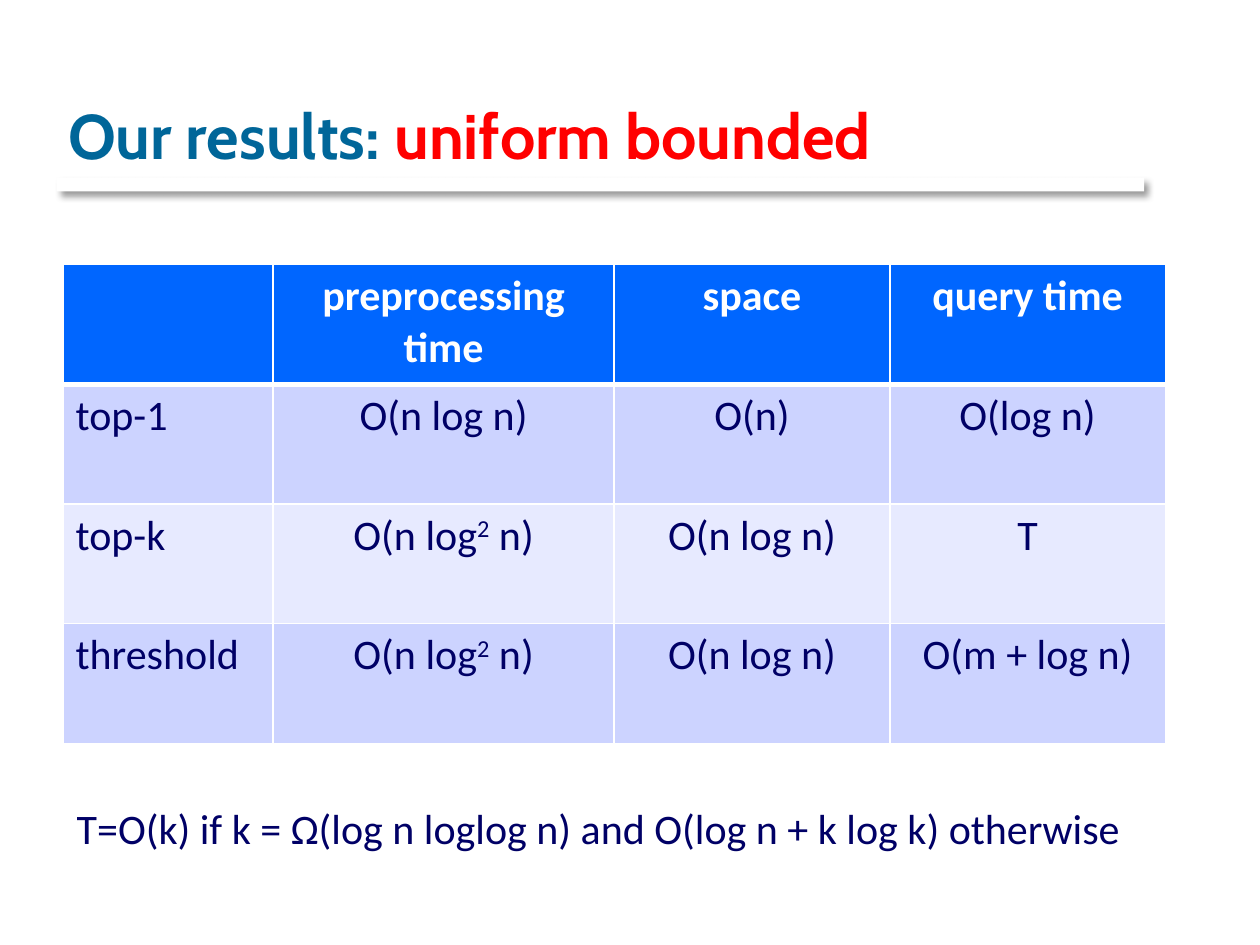
from lxml import etree
from pptx import Presentation
from pptx.dml.color import RGBColor
from pptx.enum.shapes import MSO_SHAPE
from pptx.enum.text import MSO_ANCHOR, MSO_AUTO_SIZE, PP_ALIGN
from pptx.oxml import parse_xml
from pptx.util import Pt

RECT = MSO_SHAPE.RECTANGLE
BOTTOM = MSO_ANCHOR.BOTTOM
NO_FIT = MSO_AUTO_SIZE.NONE
LEFT, CENTER = PP_ALIGN.LEFT, PP_ALIGN.CENTER
NS = "http://schemas.openxmlformats.org/drawingml/2006/main"


def color(code):
    return RGBColor.from_string(code)


class Deck:
    head, body = "Cabin", "Calibri"
    teal, red, navy, white = "006699", "FF0000", "000066", "FFFFFF"
    blue, bands = "0066FF", ("CCD3FF", "E7EAFF")

    def __init__(self):
        self.prs = Presentation()
        self.prs.slide_width, self.prs.slide_height = Pt(720), Pt(540)
        self.slide = self.prs.slides.add_slide(self.prs.slide_layouts[5])

    def box(self, *area):
        return [Pt(n) for n in area]

    def style(self, run, code, size=24, bold=False, face=body):
        font = run.font
        font.name, font.size, font.bold = face, Pt(size), bold
        font.color.rgb = color(code)

    def title(self, parts, *area):
        shape = self.slide.shapes.title
        shape.left, shape.top, shape.width, shape.height = self.box(*area)
        frame = shape.text_frame
        frame.auto_size, frame.vertical_anchor = NO_FIT, BOTTOM
        para = frame.paragraphs[0]
        para.alignment = LEFT
        for text, code in parts:
            run = para.add_run()
            run.text = text
            self.style(run, code, 36, True, self.head)

    def rule(self, *area):
        bar = self.slide.shapes.add_shape(RECT, *self.box(*area))
        bar.fill.solid()
        bar.fill.fore_color.rgb = color(self.white)
        bar.line.fill.background()
        bar.shadow.inherit = False
        effects = bar._element.spPr.find(f"{{{NS}}}effectLst")
        effects.append(parse_xml(
            f'<a:outerShdw xmlns:a="{NS}" blurRad="{Pt(4)}" dist="{Pt(3)}" '
            'dir="2700000" algn="tl" rotWithShape="0"><a:srgbClr val="000000">'
            '<a:alpha val="40000"/></a:srgbClr></a:outerShdw>'))

    def text(self, words, *area):
        frame = self.slide.shapes.add_textbox(*self.box(*area)).text_frame
        frame.word_wrap = True
        frame.text = words
        self.style(frame.paragraphs[0].runs[0], self.navy)

    def edges(self, cell, base):
        props = cell._tc.get_or_add_tcPr()
        widths = {"lnL": 1, "lnR": 1, "lnT": 1, "lnB": base}
        for spot, (tag, width) in enumerate(widths.items()):
            line = etree.Element(f"{{{NS}}}{tag}", w=str(Pt(width)))
            fill = etree.SubElement(line, f"{{{NS}}}solidFill")
            etree.SubElement(fill, f"{{{NS}}}srgbClr", val=self.white)
            props.insert(spot, line)

    def cell(self, cell, words, top, side, fill):
        cell.fill.solid()
        cell.fill.fore_color.rgb = color(fill)
        self.edges(cell, 3 if top else 1)
        para = cell.text_frame.paragraphs[0]
        para.alignment = side
        for i, part in enumerate(words.split("^")):
            run = para.add_run()
            run.text = part
            self.style(run, self.white if top else self.navy, bold=top)
            if i == 1:
                run._r.get_or_add_rPr().set("baseline", "30000")

    def table(self, rows, cols, left, top, step):
        area = self.box(left, top, sum(cols), step * len(rows))
        grid = self.slide.shapes.add_table(len(rows), len(cols), *area).table
        for col, width in zip(grid.columns, cols):
            col.width = Pt(width)
        for r, row in enumerate(rows):
            grid.rows[r].height = Pt(step)
            fill = self.bands[(r - 1) % 2] if r else self.blue
            for c, words in enumerate(row):
                side = CENTER if c else LEFT
                self.cell(grid.cell(r, c), words, r == 0, side, fill)


def main():
    deck = Deck()
    deck.rule(32.4, 101.5, 621.4, 7.9)
    deck.title([("Our results: ", deck.teal), ("uniform bounded", deck.red)],
               31.7, 12.2, 612, 90)
    deck.text("T=O(k) if k = Ω(log n loglog n) and O(log n + k log k) otherwise",
              36.7, 455, 683, 36)
    deck.table([
        ["", "preprocessing time", "space", "query time"],
        ["top-1", "O(n log n)", "O(n)", "O(log n)"],
        ["top-k", "O(n log^2^ n)", "O(n log n)", "T"],
        ["threshold", "O(n log^2^ n)", "O(n log n)", "O(m + log n)"],
    ], [120, 195, 157.5, 157.5], 36, 151.2, 68.4)
    deck.prs.save("out.pptx")


if __name__ == "__main__":
    main()
